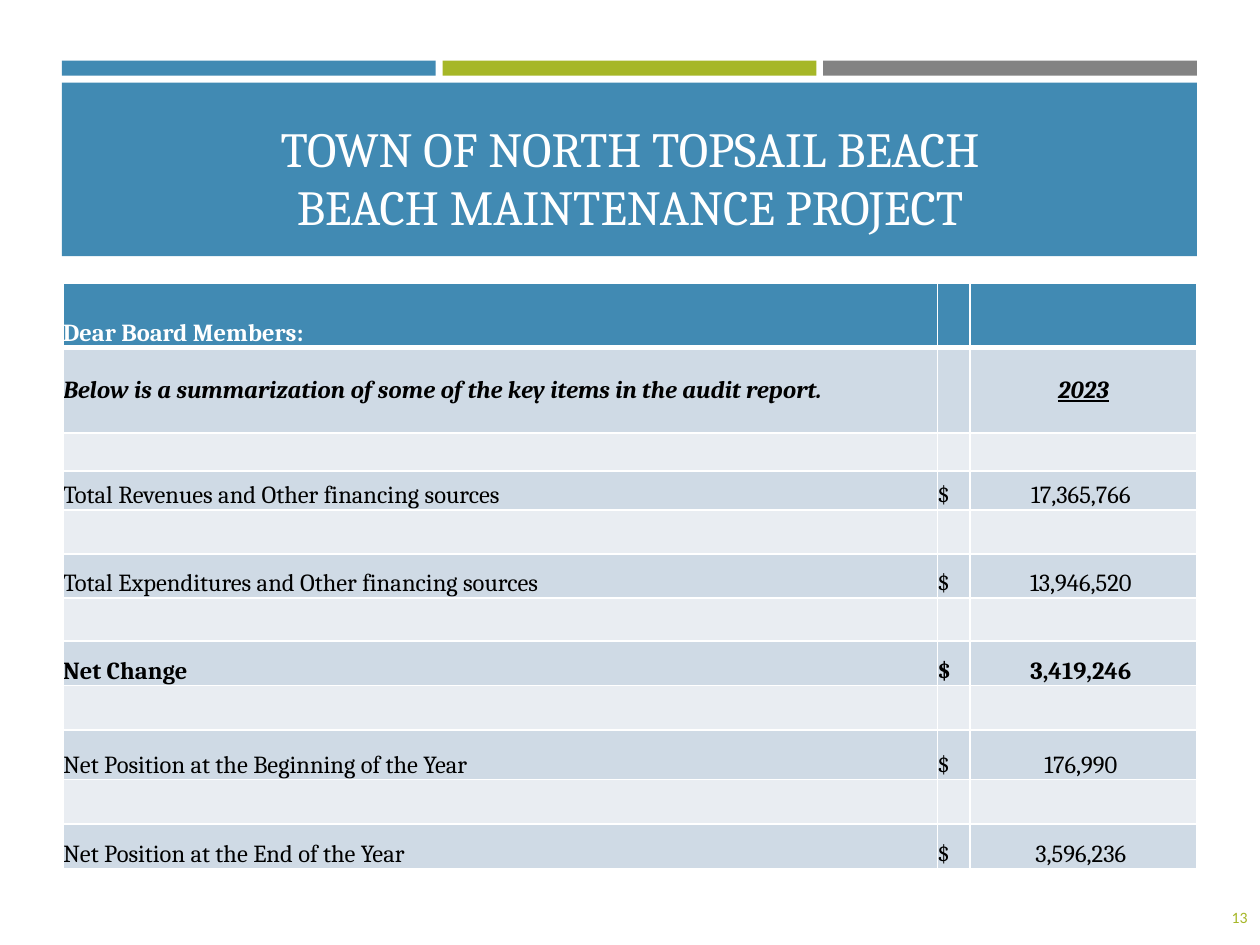
from lxml import etree
from pptx import Presentation
from pptx.dml.color import RGBColor
from pptx.enum.shapes import MSO_SHAPE
from pptx.enum.text import MSO_ANCHOR, PP_ALIGN
from pptx.oxml.ns import qn
from pptx.util import Pt

RECTANGLE = MSO_SHAPE.RECTANGLE
BOTTOM, MIDDLE = MSO_ANCHOR.BOTTOM, MSO_ANCHOR.MIDDLE
LEFT, CENTER, RIGHT = PP_ALIGN.LEFT, PP_ALIGN.CENTER, PP_ALIGN.RIGHT

BLUE, GREEN, GRAY = "418AB3", "A6B727", "838383"
WHITE, BLACK = "FFFFFF", "000000"
BAND_DARK, BAND_LIGHT = "CFDAE5", "E9EDF2"

COLUMN_WIDTHS = [499.7, 18.7, 129.6]
ROW_HEIGHTS = [36.5, 49, 21.7, 22.3, 25.2, 25, 24.8, 25.3, 25.4, 28.5, 25.2, 25.6]
INTRODUCTION = "Below is a summarization of some of the key items in the audit report."
AMOUNTS = [
    ("Total Revenues and Other financing sources", "17,365,766 "),
    ("Total Expenditures and Other financing sources", "13,946,520 "),
    ("Net Change", "3,419,246 "),
    ("Net Position at the Beginning of the Year", "176,990 "),
    ("Net Position at the End of the Year", "3,596,236 "),
]


def color(value):
    return RGBColor.from_string(value)


class SlideBuilder:
    heading_font = "Cambria"
    number_font = "Calibri"
    table_size = 14

    def __init__(self, slide):
        self.slide = slide

    def format_text(self, frame, font, size, fill, alignment, bold=False, italic=False, underline=False):
        for paragraph in frame.paragraphs:
            paragraph.alignment = alignment
            for run in paragraph.runs:
                run.font.name = font
                run.font.size = Pt(size)
                run.font.color.rgb = color(fill)
                run.font.bold = bold
                run.font.italic = italic
                run.font.underline = underline

    def rectangle(self, left, top, width, height, fill):
        shape = self.slide.shapes.add_shape(RECTANGLE, Pt(left), Pt(top), Pt(width), Pt(height))
        shape.shadow.inherit = False
        shape.fill.solid()
        shape.fill.fore_color.rgb = color(fill)
        shape.line.fill.background()

    def text(self, left, top, width, height, content, font, size, fill, alignment, anchor):
        shape = self.slide.shapes.add_textbox(Pt(left), Pt(top), Pt(width), Pt(height))
        frame = shape.text_frame
        frame.word_wrap = True
        frame.vertical_anchor = anchor
        frame.paragraphs[0].text = content
        self.format_text(frame, font, size, fill, alignment)

    def table(self, left, top, column_widths, row_heights):
        frame = self.slide.shapes.add_table(
            len(row_heights), len(column_widths), Pt(left), Pt(top),
            Pt(sum(column_widths)), Pt(sum(row_heights)))
        for column, width in zip(frame.table.columns, column_widths):
            column.width = Pt(width)
        for row, height in zip(frame.table.rows, row_heights):
            row.height = Pt(height)
        return frame.table

    def cell(self, cell, content, fill, bottom_width, alignment, anchor, text_color=BLACK, **style):
        cell.margin_left = cell.margin_right = cell.margin_top = cell.margin_bottom = 0
        cell.vertical_anchor = anchor
        if content:
            cell.text_frame.text = content
            self.format_text(cell.text_frame, self.heading_font, self.table_size,
                             text_color, alignment, **style)
        else:
            paragraph = cell.text_frame.paragraphs[0]
            etree.SubElement(paragraph._p, qn("a:endParaRPr"), sz=str(self.table_size * 100))
        self.borders(cell, bottom_width)
        cell.fill.solid()
        cell.fill.fore_color.rgb = color(fill)

    def borders(self, cell, bottom_width):
        properties = cell._tc.get_or_add_tcPr()
        for side, width in (("L", 1), ("R", 1), ("T", 1), ("B", bottom_width)):
            line = etree.SubElement(properties, qn(f"a:ln{side}"), w=str(Pt(width)))
            solid = etree.SubElement(line, qn("a:solidFill"))
            etree.SubElement(solid, qn("a:srgbClr"), val=WHITE)


def audit_rows():
    rows = [("Dear Board Members:", "", ""), (INTRODUCTION, "", "2023")]
    for label, amount in AMOUNTS:
        rows += [("", "", ""), (label, "$", amount)]
    return rows


def fill_audit_table(builder, table):
    for row_index, row in enumerate(audit_rows()):
        header, introduction = row_index == 0, row_index == 1
        fill = BLUE if header else BAND_DARK if row_index % 2 else BAND_LIGHT
        for column_index, content in enumerate(row):
            builder.cell(
                table.cell(row_index, column_index), content, fill,
                bottom_width=3 if header else 1,
                alignment=CENTER if column_index == 2 else LEFT,
                anchor=MIDDLE if introduction else BOTTOM,
                text_color=WHITE if header else BLACK,
                bold=header or introduction or row[0] == "Net Change",
                italic=introduction,
                underline=introduction and column_index == 2)


def main():
    presentation = Presentation()
    presentation.slide_width, presentation.slide_height = Pt(720), Pt(540)
    builder = SlideBuilder(presentation.slides.add_slide(presentation.slide_layouts[6]))

    left, width, gap = 35.4, 648.6, 3.9
    bar_width = (width - 2 * gap) / 3
    for index, fill in enumerate((BLUE, GREEN, GRAY)):
        builder.rectangle(left + index * (bar_width + gap), 34.7, bar_width, 8.5, fill)
    builder.rectangle(left, 47.3, width, 99.1, BLUE)
    builder.text(18, 30.24, 684, 108, "TOWN OF NORTH TOPSAIL BEACH\vBEACH MAINTENANCE PROJECT",
                 builder.heading_font, 28, WHITE, CENTER, BOTTOM)
    builder.text(659.5, 510, 60.5, 28.8, "13", builder.number_font, 9, GREEN, RIGHT, MIDDLE)
    fill_audit_table(builder, builder.table(36, 162, COLUMN_WIDTHS, ROW_HEIGHTS))

    presentation.save("out.pptx")


if __name__ == "__main__":
    main()
